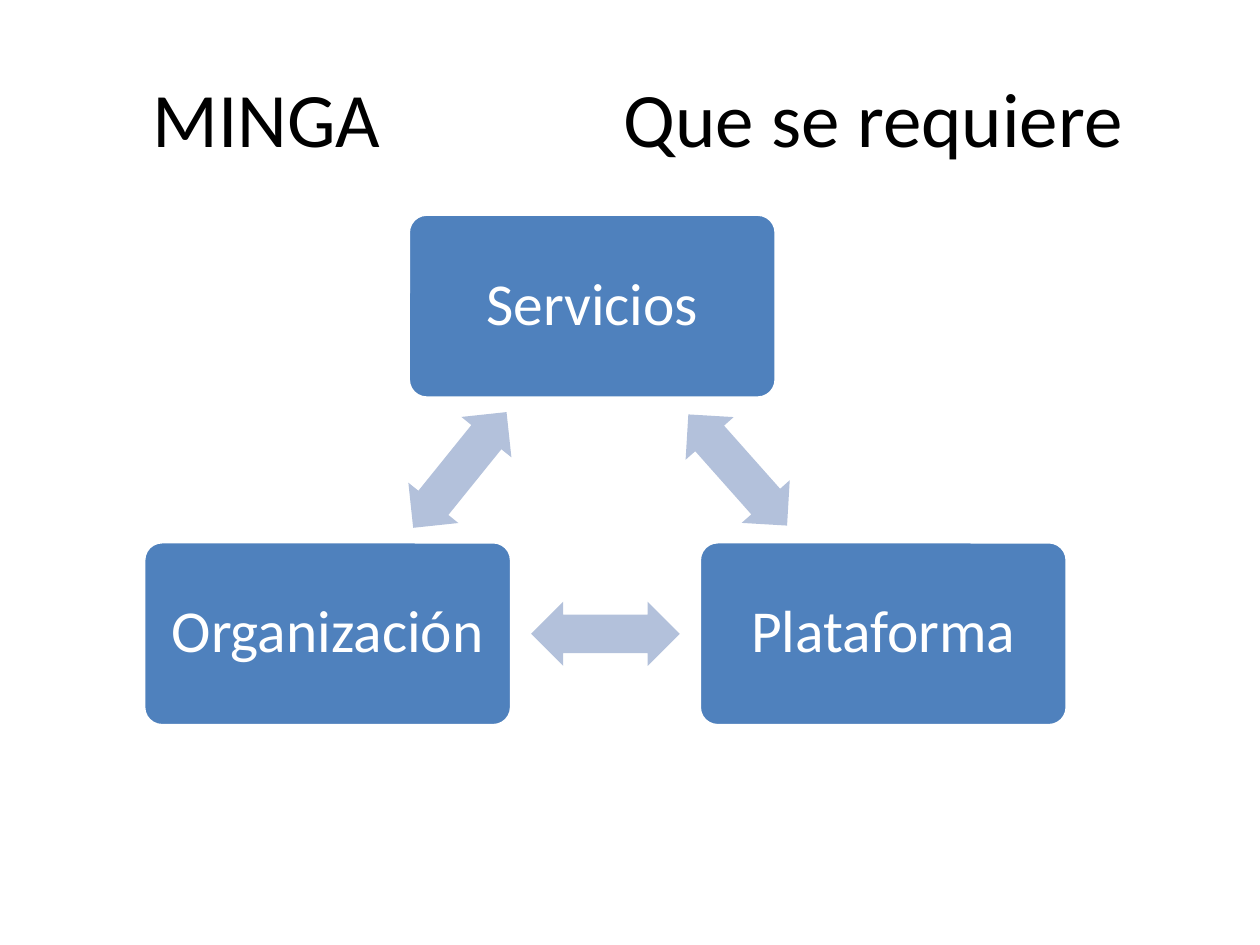
from math import atan2, degrees

from lxml import etree
from pptx import Presentation
from pptx.dml.color import RGBColor
from pptx.enum.shapes import MSO_SHAPE as SHAPE
from pptx.enum.text import MSO_ANCHOR as ANCHOR, PP_ALIGN as ALIGN
from pptx.oxml.ns import qn
from pptx.util import Inches, Pt

TITLE = "MINGA\tQue se requiere"
TITLE_TAB = 3.74
BOXES = [("Servicios", 4.7, 2.43), ("Plataforma", 7.01, 5.03), ("Organización", 2.6, 5.03)]
BOX_SIZE = (2.92, 1.46)
ARROW_SIZE = (1.18, 0.51)
COLORS = {"box": "4F81BD", "arrow": "B3C1DB", "light": "FFFFFF", "title": "000000"}


def color(name):
    return RGBColor.from_string(COLORS[name])


def set_font(p, size, name):
    p.font.name = "Calibri"
    p.font.size = Pt(size)
    p.font.color.rgb = color(name)


def add_title(slide):
    sp = slide.shapes.title
    sp.left, sp.top, sp.width, sp.height = map(Inches, (0.5, 0.3, 9.22, 1.25))
    tf = sp.text_frame
    tf.text = TITLE
    tf.vertical_anchor = ANCHOR.MIDDLE
    tf.margin_left = Inches(0.71)
    p = tf.paragraphs[0]
    p.alignment = ALIGN.LEFT
    tabs = etree.SubElement(p._p.get_or_add_pPr(), qn("a:tabLst"))
    etree.SubElement(tabs, qn("a:tab"), pos=str(Inches(TITLE_TAB)), algn="l")
    set_font(p, 44, "title")


def add_centered(slide, kind, x, y, size, fill):
    w, h = size
    sp = slide.shapes.add_shape(kind, *map(Inches, (x - w / 2, y - h / 2, w, h)))
    sp.shadow.inherit = False
    sp.fill.solid()
    sp.fill.fore_color.rgb = color(fill)
    return sp


def add_box(slide, text, x, y):
    sp = add_centered(slide, SHAPE.ROUNDED_RECTANGLE, x, y, BOX_SIZE, "box")
    sp.adjustments[0] = 0.1
    sp.line.color.rgb = color("light")
    sp.line.width = Pt(2)
    tf = sp.text_frame
    tf.word_wrap = True
    tf.vertical_anchor = ANCHOR.MIDDLE
    tf.margin_left = tf.margin_right = tf.margin_top = tf.margin_bottom = Inches(0.14)
    tf.text = text
    p = tf.paragraphs[0]
    p.alignment = ALIGN.CENTER
    p.line_spacing = 0.9
    set_font(p, 34, "light")


def add_arrow(slide, start, end):
    (_, x1, y1), (_, x2, y2) = start, end
    sp = add_centered(slide, SHAPE.LEFT_RIGHT_ARROW, (x1 + x2) / 2, (y1 + y2) / 2,
                      ARROW_SIZE, "arrow")
    sp.adjustments[0], sp.adjustments[1] = 0.6, 0.5
    sp.line.fill.background()
    sp.rotation = round(degrees(atan2(y2 - y1, x2 - x1)) % 360, 1)


def main():
    """Build the slide: three services boxes joined in a cycle by double arrows."""
    prs = Presentation()
    prs.slide_width, prs.slide_height = Inches(10), Inches(7.5)
    slide = prs.slides.add_slide(prs.slide_layouts[5])
    add_title(slide)
    for box, following in zip(BOXES, BOXES[1:] + BOXES[:1]):
        add_box(slide, *box)
        add_arrow(slide, box, following)
    prs.save("out.pptx")


if __name__ == "__main__":
    main()
